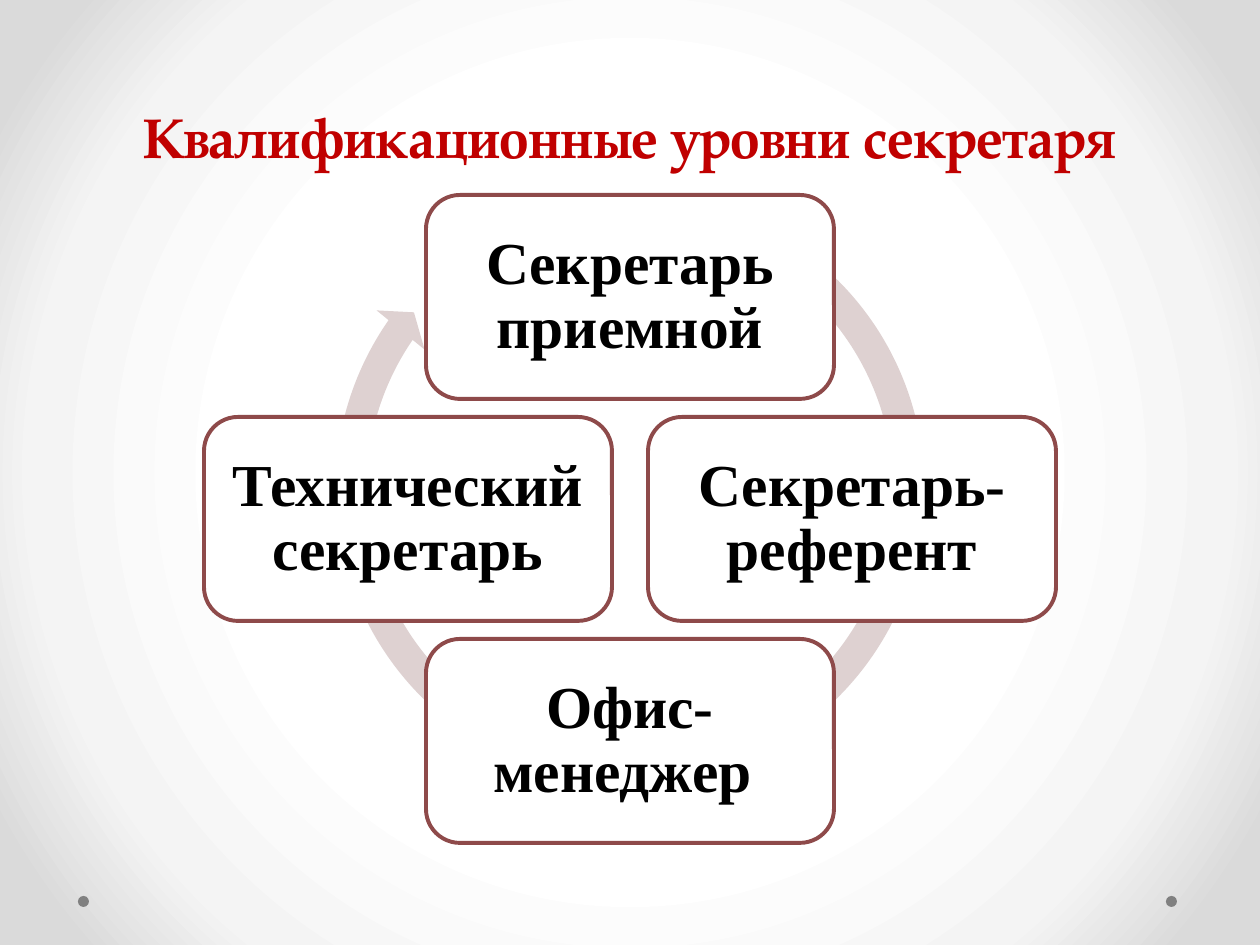
from dataclasses import dataclass

from pptx import Presentation
from pptx.dml.color import RGBColor
from pptx.enum.shapes import MSO_SHAPE
from pptx.enum.text import MSO_ANCHOR, PP_ALIGN
from pptx.oxml import parse_xml
from pptx.oxml.ns import nsdecls
from pptx.util import Pt

OVAL = MSO_SHAPE.OVAL
CIRCULAR_ARROW = MSO_SHAPE.CIRCULAR_ARROW
ROUNDED_RECTANGLE = MSO_SHAPE.ROUNDED_RECTANGLE
MIDDLE = MSO_ANCHOR.MIDDLE
BOTTOM = MSO_ANCHOR.BOTTOM
CENTER = PP_ALIGN.CENTER

EMU_PER_PX = 914400 // 126
SLIDE_WIDTH, SLIDE_HEIGHT = 1260, 945
CYCLE_CENTER_X, CYCLE_CENTER_Y = 630, 519
CYCLE_RADIUS = 222
CARD_WIDTH, CARD_HEIGHT = 408, 204
CARD_INSET = 17
DOT_SIZE = 11

LEVELS = [
    ("Секретарь приемной", 0, -1),
    ("Секретарь-референт", 1, 0),
    ("Офис-менеджер ", 0, 1),
    ("Технический секретарь", -1, 0),
]


@dataclass(frozen=True)
class Theme:
    title_color: str = "C00000"
    text_color: str = "000000"
    card_fill: str = "FFFFFF"
    card_line: str = "8E4A4A"
    arrow_fill: str = "DED1D1"
    dot_fill: str = "808080"
    background: tuple = ((50, "FFFFFF"), (76, "F4F4F4"), (92, "DADADA"))
    title_font: str = "TeX Gyre Pagella"
    card_font: str = "Times New Roman"
    title_size: int = 32
    card_size: int = 34
    title_spacing: int = 58
    card_spacing: float = 0.9
    line_width: float = 2.25


def px(length):
    return length * EMU_PER_PX


def apply_format(target, values):
    for name, value in values.items():
        setattr(target, name, value)


class SlideBuilder:
    def __init__(self, slide, theme):
        self.slide = slide
        self.theme = theme

    def background(self):
        stops = "".join(
            f'<a:gs pos="{position * 1000}"><a:srgbClr val="{color}"/></a:gs>'
            for position, color in self.theme.background
        )
        element = parse_xml(
            f'<p:bg {nsdecls("p", "a")}><p:bgPr><a:gradFill rotWithShape="1">'
            f'<a:gsLst>{stops}</a:gsLst><a:path path="circle">'
            '<a:fillToRect l="50000" t="50000" r="50000" b="50000"/></a:path>'
            "</a:gradFill><a:effectLst/></p:bgPr></p:bg>"
        )
        self.slide.element.cSld.insert(0, element)

    def shape(self, kind, left, top, width, height, fill, line=None):
        shape = self.slide.shapes.add_shape(kind, px(left), px(top), px(width), px(height))
        shape.shadow.inherit = False
        shape.fill.solid()
        shape.fill.fore_color.rgb = RGBColor.from_string(fill)
        if line:
            shape.line.color.rgb = RGBColor.from_string(line)
            shape.line.width = Pt(self.theme.line_width)
        else:
            shape.line.fill.background()
        return shape

    def add_text(self, shape, text, color, frame_format, paragraph_format, font_format):
        frame = shape.text_frame
        paragraph = frame.paragraphs[0]
        run = paragraph.add_run()
        run.text = text
        apply_format(frame, {"word_wrap": True, **frame_format})
        apply_format(paragraph, {"alignment": CENTER, **paragraph_format})
        apply_format(run.font, {"bold": True, **font_format})
        run.font.color.rgb = RGBColor.from_string(color)

    def title(self, text, left, top, width, height):
        theme = self.theme
        box = self.slide.shapes.add_textbox(px(left), px(top), px(width), px(height))
        self.add_text(
            box, text, theme.title_color,
            {"vertical_anchor": BOTTOM},
            {"line_spacing": Pt(theme.title_spacing)},
            {"name": theme.title_font, "size": Pt(theme.title_size)},
        )

    def dot(self, left, top):
        self.shape(OVAL, left, top, DOT_SIZE, DOT_SIZE, self.theme.dot_fill)

    def cycle_arrow(self, left, top, size, adjustments):
        arrow = self.shape(CIRCULAR_ARROW, left, top, size, size, self.theme.arrow_fill)
        for index, value in enumerate(adjustments):
            arrow.adjustments[index] = value

    def card(self, text, center_x, center_y):
        theme = self.theme
        card = self.shape(
            ROUNDED_RECTANGLE,
            center_x - CARD_WIDTH // 2, center_y - CARD_HEIGHT // 2,
            CARD_WIDTH, CARD_HEIGHT, theme.card_fill, theme.card_line,
        )
        sides = ("left", "top", "right", "bottom")
        margins = {f"margin_{side}": px(CARD_INSET) for side in sides}
        self.add_text(
            card, text, theme.text_color,
            {"vertical_anchor": MIDDLE, **margins},
            {"line_spacing": theme.card_spacing},
            {"name": theme.card_font, "size": Pt(theme.card_size)},
        )


def main():
    presentation = Presentation()
    presentation.slide_width = px(SLIDE_WIDTH)
    presentation.slide_height = px(SLIDE_HEIGHT)
    slide = presentation.slides.add_slide(presentation.slide_layouts[6])
    builder = SlideBuilder(slide, Theme())

    builder.background()
    for left in (1166, 78):
        builder.dot(left, 896)
    builder.title("Квалификационные уровни секретаря", 63, 37, 1134, 139)
    builder.cycle_arrow(320, 179, 620, (0.05, 2.73, 128.83, 179.96, 0.05))
    for text, column, row in LEVELS:
        builder.card(
            text,
            CYCLE_CENTER_X + column * CYCLE_RADIUS,
            CYCLE_CENTER_Y + row * CYCLE_RADIUS,
        )
    presentation.save("out.pptx")


if __name__ == "__main__":
    main()
